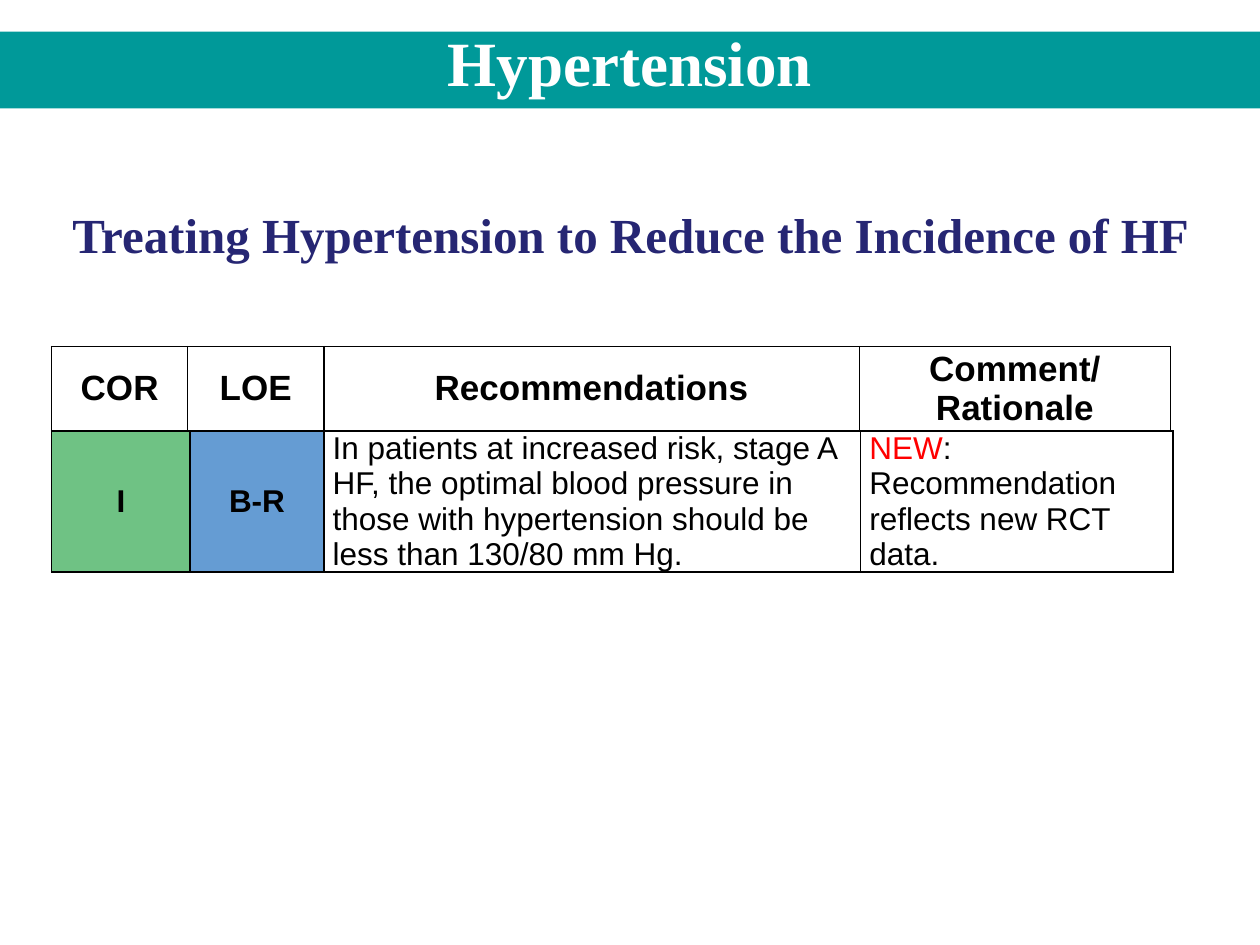
import pptx
import pptx.dml.color
import pptx.enum.shapes
import pptx.enum.text
import pptx.oxml
import pptx.oxml.ns
import pptx.util
from pptx.util import Inches

RGBColor = pptx.dml.color.RGBColor
ALIGN = pptx.enum.text.PP_ALIGN
ANCHOR = pptx.enum.text.MSO_ANCHOR

TEAL = RGBColor(0x00, 0x99, 0x99)
NAVY = RGBColor(0x26, 0x26, 0x73)
GREEN = RGBColor(0x6F, 0xC2, 0x84)
BLUE = RGBColor(0x65, 0x9C, 0xD3)
RED = RGBColor(0xFF, 0x00, 0x00)
WHITE = RGBColor(0xFF, 0xFF, 0xFF)
BLACK = RGBColor(0x00, 0x00, 0x00)


def write_text(frame, paragraphs, font="Arial", size=18, bold=False,
               color=BLACK, align=ALIGN.LEFT, spacing=None):
    """Fill a frame; each paragraph is a list of (text, colour or None) spans."""
    frame.word_wrap = True
    for index, spans in enumerate(paragraphs):
        para = frame.add_paragraph() if index else frame.paragraphs[0]
        para.alignment = align
        if spacing:
            para.line_spacing = spacing
        for text, span_color in spans:
            span = para.add_run()
            span.text = text
            span.font.name = font
            span.font.size = pptx.util.Pt(size)
            span.font.bold = bold
            span.font.color.rgb = span_color or color


def add_band(page, text, left, top, width, height, fill, anchor, **text_format):
    box = page.shapes.add_shape(
        pptx.enum.shapes.MSO_SHAPE.RECTANGLE,
        Inches(left), Inches(top), Inches(width), Inches(height))
    box.shadow.inherit = False
    box.fill.solid()
    box.fill.fore_color.rgb = fill
    box.line.fill.background()
    box.text_frame.vertical_anchor = anchor
    write_text(box.text_frame, [[(text, None)]], font="Times New Roman",
               bold=True, align=ALIGN.CENTER, **text_format)


def set_borders(cell):
    """Draw the four sides in black; sides must come before the cell fill."""
    properties = cell._tc.get_or_add_tcPr()
    for position, side in enumerate(("lnL", "lnR", "lnT", "lnB")):
        properties.insert(position, pptx.oxml.parse_xml(
            f'<a:{side} {pptx.oxml.ns.nsdecls("a")} w="12700"><a:solidFill>'
            f'<a:srgbClr val="{BLACK}"/></a:solidFill></a:{side}>'))


def add_row_table(page, top, height, widths, cells):
    """Add a one-row table; each cell is (paragraphs, fill, text format)."""
    table = page.shapes.add_table(
        1, len(cells), Inches(0.41), Inches(top),
        Inches(sum(widths)), Inches(height)).table
    table.first_row = table.horz_banding = False
    for column, width in zip(table.columns, widths):
        column.width = Inches(width)
    for cell, (paragraphs, fill, text_format) in zip(table.rows[0].cells, cells):
        cell.margin_left = cell.margin_right = Inches(0.07)
        cell.margin_top = cell.margin_bottom = 0
        centered = text_format.get("align") == ALIGN.CENTER
        cell.vertical_anchor = ANCHOR.MIDDLE if centered else ANCHOR.TOP
        if fill:
            cell.fill.solid()
            cell.fill.fore_color.rgb = fill
        else:
            cell.fill.background()
        set_borders(cell)
        write_text(cell.text_frame, paragraphs, **text_format)


def main():
    deck = pptx.Presentation()
    deck.slide_width, deck.slide_height = Inches(10), Inches(7.5)
    page = deck.slides.add_slide(deck.slide_layouts[6])

    add_band(page, "Hypertension", 0, 0.25, 10, 0.61, TEAL, ANCHOR.TOP,
             size=36, color=WHITE, spacing=0.8)
    add_band(page, "Treating Hypertension to Reduce the Incidence of HF",
             0.01, 1.58, 9.99, 0.56, WHITE, ANCHOR.MIDDLE, size=28, color=NAVY)

    heading = {"size": 20, "bold": True, "align": ALIGN.CENTER}
    grade = {"bold": True, "align": ALIGN.CENTER}
    headings = [["COR"], ["LOE"], ["Recommendations"], ["Comment/", "Rationale"]]
    add_row_table(page, 2.75, 0.67, [1.08, 1.08, 4.25, 2.47], [
        ([[(line, None)] for line in lines], None, heading) for lines in headings])
    recommendation = (
        "In patients at increased risk, stage A HF, the optimal blood pressure "
        "in those with hypertension should be less than 130/80 mm Hg.")
    add_row_table(page, 3.42, 1.12, [1.1, 1.06, 4.26, 2.48], [
        ([[("I", None)]], GREEN, grade),
        ([[("B-R", None)]], BLUE, grade),
        ([[(recommendation, None)]], None, {}),
        ([[("NEW", RED), (": Recommendation reflects new RCT data.", None)]], None, {}),
    ])
    deck.save("out.pptx")


if __name__ == "__main__":
    main()
